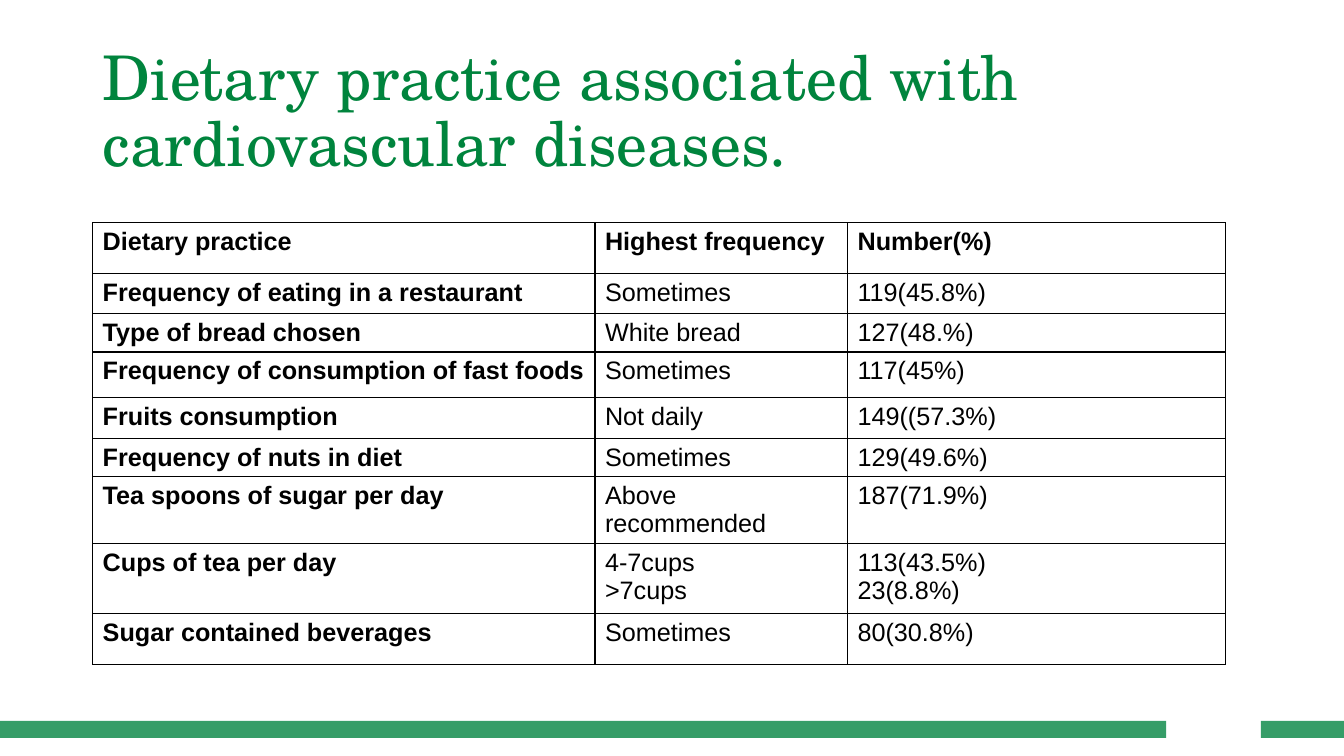
from lxml import etree
from pptx import Presentation
from pptx.dml.color import RGBColor
from pptx.enum.shapes import MSO_SHAPE
from pptx.enum.text import MSO_ANCHOR, MSO_AUTO_SIZE, PP_ALIGN
from pptx.oxml.ns import qn
from pptx.util import Pt

RECT = MSO_SHAPE.RECTANGLE
TOP, MIDDLE = MSO_ANCHOR.TOP, MSO_ANCHOR.MIDDLE
LEFT = PP_ALIGN.LEFT
NO_FIT = MSO_AUTO_SIZE.NONE

GREEN = RGBColor(0x00, 0x84, 0x3D)
BAR = RGBColor(0x36, 0x9D, 0x68)
BLACK = RGBColor(0, 0, 0)

# Content
TITLE = "Dietary practice associated with cardiovascular diseases."
ROWS = [
    ("Dietary practice", "Highest frequency", "Number(%)"),
    ("Frequency of eating in a restaurant", "Sometimes", "119(45.8%)"),
    ("Type of bread chosen", "White bread", "127(48.%)"),
    ("Frequency of consumption of fast foods", "Sometimes", "117(45%)"),
    ("Fruits consumption", "Not daily", "149((57.3%)"),
    ("Frequency of nuts in diet", "Sometimes", "129(49.6%)"),
    ("Tea spoons of sugar per day", "Above recommended", "187(71.9%)"),
    ("Cups of tea per day", "4-7cups\n>7cups", "113(43.5%)\n23(8.8%)"),
    ("Sugar contained beverages", "Sometimes", "80(30.8%)"),
]

# Layout in points
WIDE, HIGH = 960, 540
EDGE = 66.2
COLS = [358.8, 180.4, 269.8]
TALL = [36, 28.8, 26, 32.4, 29.4, 26.6, 44, 50.4, 36]
GAP = (833, 900.7)  # opening in the footer bar
BAR_TOP, BAR_HIGH = 515, 12.2


def write(frame, text, font="Arial", size=18, color=BLACK, bold=False,
          space=1.0):
    frame.text = text
    for para in frame.paragraphs:
        para.alignment = LEFT
        para.line_spacing = space
        for run in para.runs:
            run.font.name = font
            run.font.size = Pt(size)
            run.font.bold = bold
            run.font.color.rgb = color


def outline(cell):
    props = cell._tc.get_or_add_tcPr()
    for n, side in enumerate(("a:lnL", "a:lnR", "a:lnT", "a:lnB")):
        line = etree.Element(qn(side), w=str(Pt(1)))
        fill = etree.SubElement(line, qn("a:solidFill"))
        etree.SubElement(fill, qn("a:srgbClr"), val=str(BLACK))
        props.insert(n, line)


deck = Presentation()
deck.slide_width, deck.slide_height = Pt(WIDE), Pt(HIGH)
slide = deck.slides.add_slide(deck.slide_layouts[5])

# Footer bar in two parts
for start, end in ((0, GAP[0]), (GAP[1], WIDE)):
    bar = slide.shapes.add_shape(
        RECT, Pt(start), Pt(BAR_TOP), Pt(end - start), Pt(BAR_HIGH))
    bar.shadow.inherit = False
    bar.fill.solid()
    bar.fill.fore_color.rgb = BAR
    bar.line.fill.background()

# Title
title = slide.shapes.title
title.left, title.top = Pt(EDGE), Pt(28.8)
title.width, title.height = Pt(828), Pt(104.4)
frame = title.text_frame
frame.word_wrap = True
frame.auto_size = NO_FIT
frame.vertical_anchor = MIDDLE
write(frame, TITLE, font="TeX Gyre Schola", size=44, color=GREEN, space=0.9)

# Table
table = slide.shapes.add_table(
    len(ROWS), len(COLS), Pt(EDGE), Pt(159.2),
    Pt(sum(COLS)), Pt(sum(TALL))).table
table.horz_banding = False
for col, width in zip(table.columns, COLS):
    col.width = Pt(width)
for r, texts in enumerate(ROWS):
    table.rows[r].height = Pt(TALL[r])
    for c, text in enumerate(texts):
        cell = table.cell(r, c)
        cell.vertical_anchor = TOP
        cell.fill.background()
        outline(cell)
        write(cell.text_frame, text, bold=r == 0 or c == 0)

deck.save("out.pptx")
